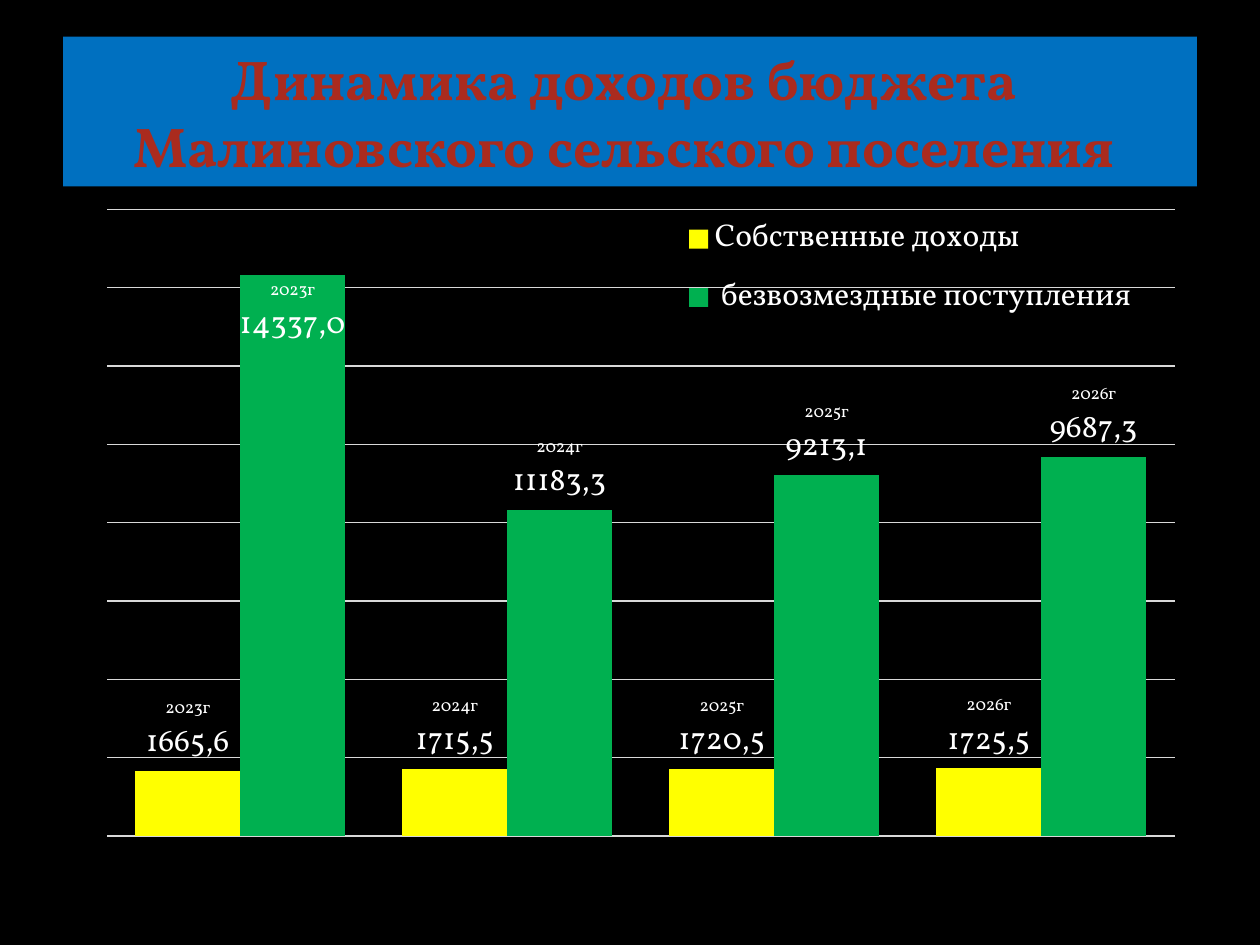
import pptx
import pptx.chart.data
import pptx.dml.color
import pptx.enum.chart
import pptx.enum.text
import pptx.oxml
import pptx.util

FONT = "Vollkorn"
YEARS = ["2023г", "2024г", "2025г", "2026г"]
POSITION = pptx.enum.chart.XL_LABEL_POSITION
# Name, colour, bar values, label values
SERIES = [
    ("Собственные доходы", "FFFF00",
     [1665.6, 1715.5, 1720.5, 1725.5],
     ["1665,6", "1715,5", "1720,5", "1725,5"]),
    (" безвозмездные поступления ", "00B050",
     [14337, 8330, 9213.1, 9687.3],
     ["14337,0", "11183,3", "9213,1", "9687,3"]),
]


def style_font(font, size, color, bold=False):
    font.name = FONT
    font.size = pptx.util.Pt(size)
    font.bold = bold
    font.color.rgb = pptx.dml.color.RGBColor.from_string(color)


def manual_layout(left, top, width, height, inner=False):
    target = '<c:layoutTarget val="inner"/>' if inner else ""
    return pptx.oxml.parse_xml(
        '<c:layout xmlns:c="http://schemas.openxmlformats.org/drawingml/2006/chart">'
        f'<c:manualLayout>{target}<c:xMode val="edge"/><c:yMode val="edge"/>'
        f'<c:x val="{left}"/><c:y val="{top}"/><c:w val="{width}"/><c:h val="{height}"/>'
        '</c:manualLayout></c:layout>')


presentation = pptx.Presentation()
presentation.slide_width = pptx.util.Inches(10)
presentation.slide_height = pptx.util.Inches(7.5)
slide = presentation.slides.add_slide(presentation.slide_layouts[5])
slide.background.fill.solid()
slide.background.fill.fore_color.rgb = pptx.dml.color.RGBColor.from_string("000000")

# Title band
title = slide.shapes.title
title.left, title.top = pptx.util.Inches(0.5), pptx.util.Inches(0.29)
title.width, title.height = pptx.util.Inches(9), pptx.util.Inches(1.19)
title.fill.solid()
title.fill.fore_color.rgb = pptx.dml.color.RGBColor.from_string("0070C0")
title.text_frame.text = "Динамика доходов бюджета \vМалиновского сельского поселения "
title.text_frame.vertical_anchor = pptx.enum.text.MSO_ANCHOR.MIDDLE
paragraph = title.text_frame.paragraphs[0]
paragraph.alignment = pptx.enum.text.PP_ALIGN.CENTER
for run in paragraph.runs:
    style_font(run.font, 32, "AA2B1E", bold=True)

# Income chart
chart_data = pptx.chart.data.CategoryChartData(number_format="0.0")
chart_data.categories = ["1", "2", "3", "4"]
for name, color, values, captions in SERIES:
    chart_data.add_series(name, values)
chart = slide.shapes.add_chart(
    pptx.enum.chart.XL_CHART_TYPE.COLUMN_CLUSTERED,
    pptx.util.Inches(0.67), pptx.util.Inches(1.56),
    pptx.util.Inches(8.83), pptx.util.Inches(5.18), chart_data).chart
chart.has_title = False
style_font(chart.font, 18, "FFFFFF")
plot_area = chart.plots[0]
plot_area.gap_width = 55
plot_area.overlap = 0
plot_area.vary_by_categories = False

# Hidden axes with light gridlines
chart.category_axis.visible = False
chart.value_axis.visible = False
chart.value_axis.minimum_scale = 0
chart.value_axis.maximum_scale = 16000
chart.value_axis.major_unit = 2000
chart.value_axis.has_major_gridlines = True
gridline = chart.value_axis.major_gridlines.format.line
gridline.width = pptx.util.Pt(0.75)
gridline.color.rgb = pptx.dml.color.RGBColor.from_string("D9D9D9")

# Bars and two-line labels
for series, (name, color, values, captions) in zip(plot_area.series, SERIES):
    series.format.fill.solid()
    series.format.fill.fore_color.rgb = pptx.dml.color.RGBColor.from_string(color)
    series.data_labels.show_value = True
    for index, (year, caption) in enumerate(zip(YEARS, captions)):
        label = series.points[index].data_label
        label.text_frame.text = f"{year}\n{caption}"
        for paragraph, size in zip(label.text_frame.paragraphs, (10, 18)):
            style_font(paragraph.runs[0].font, size, "FFFFFF")
        tall = values[index] > 14000
        label.position = POSITION.INSIDE_END if tall else POSITION.OUTSIDE_END

# Legend over the plot
chart.has_legend = True
chart.legend.position = pptx.enum.chart.XL_LEGEND_POSITION.RIGHT
chart.legend.include_in_layout = False
style_font(chart.legend.font, 18, "FFFFFF")
legend_xml = chart.legend._element
for old_layout in legend_xml.findall(pptx.oxml.ns.qn("c:layout")):
    legend_xml.remove(old_layout)
legend_xml.find(pptx.oxml.ns.qn("c:legendPos")).addnext(manual_layout(0.53, 0.01, 0.43, 0.2))
legend_xml.find(pptx.oxml.ns.qn("c:overlay")).set("val", "1")

# Plot area with equal margins
plot_xml = chart._chartSpace.chart.plotArea
for old_layout in plot_xml.findall(pptx.oxml.ns.qn("c:layout")):
    plot_xml.remove(old_layout)
plot_xml.insert(0, manual_layout(0.02, 0.02, 0.96, 0.96, inner=True))

presentation.save("out.pptx")
